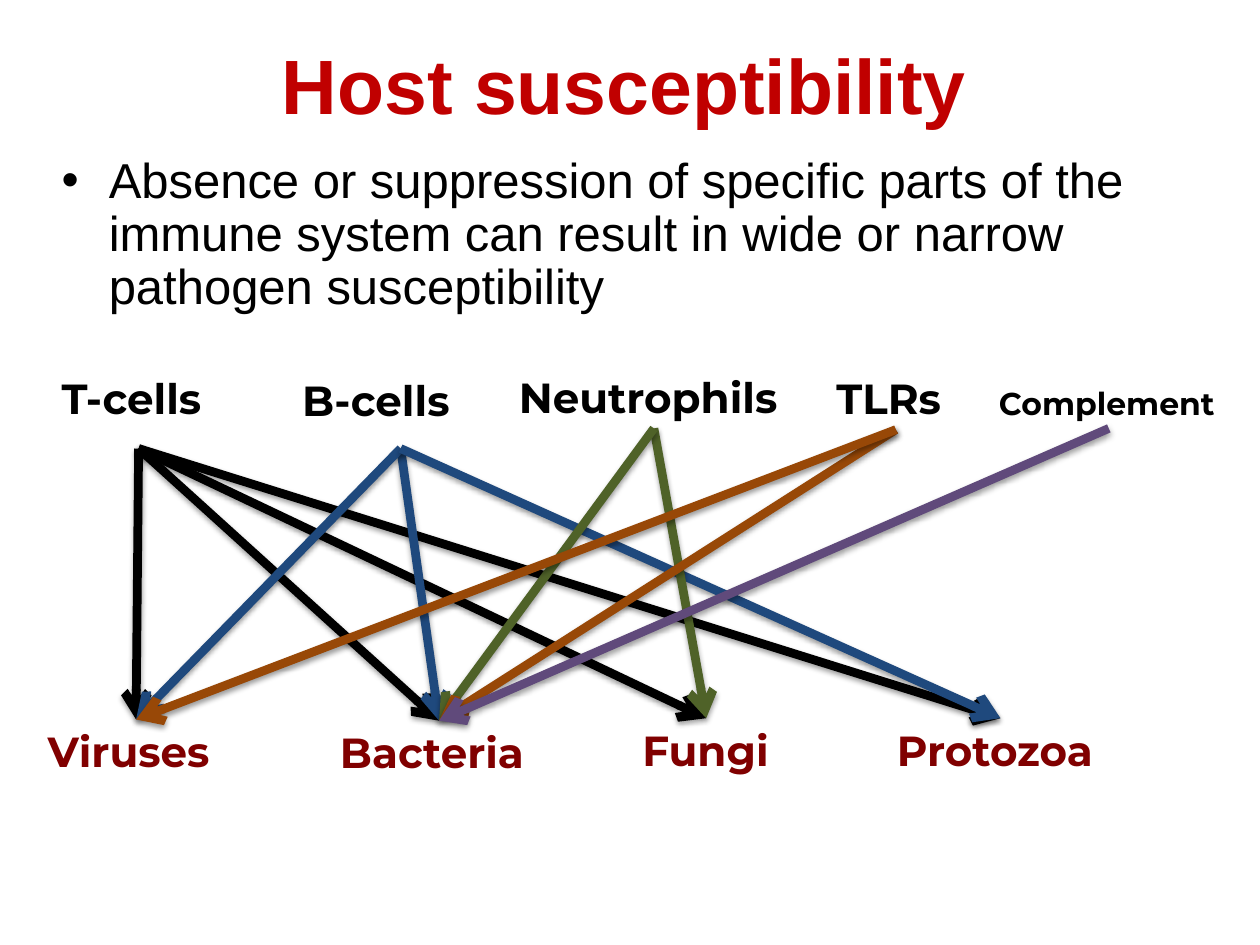
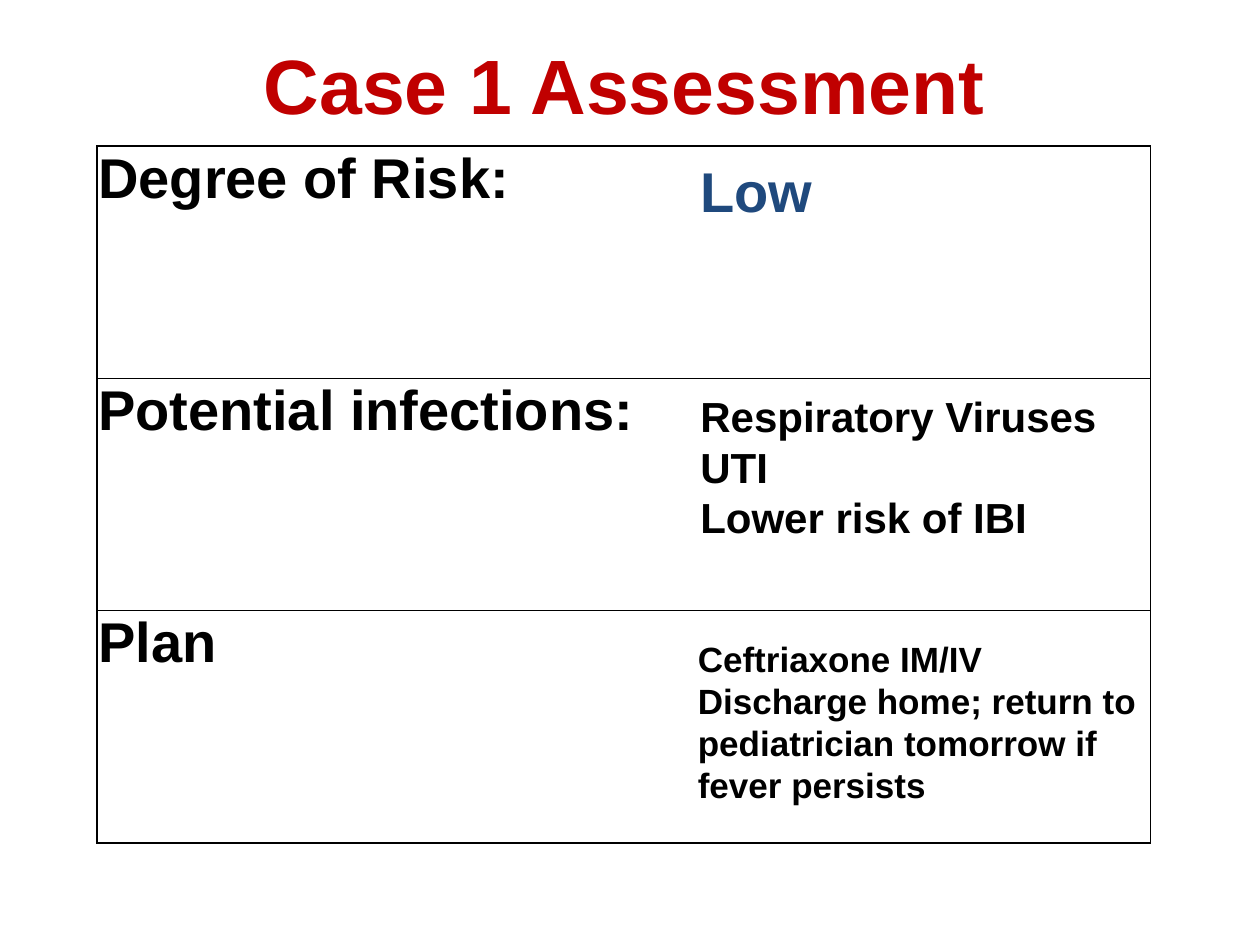
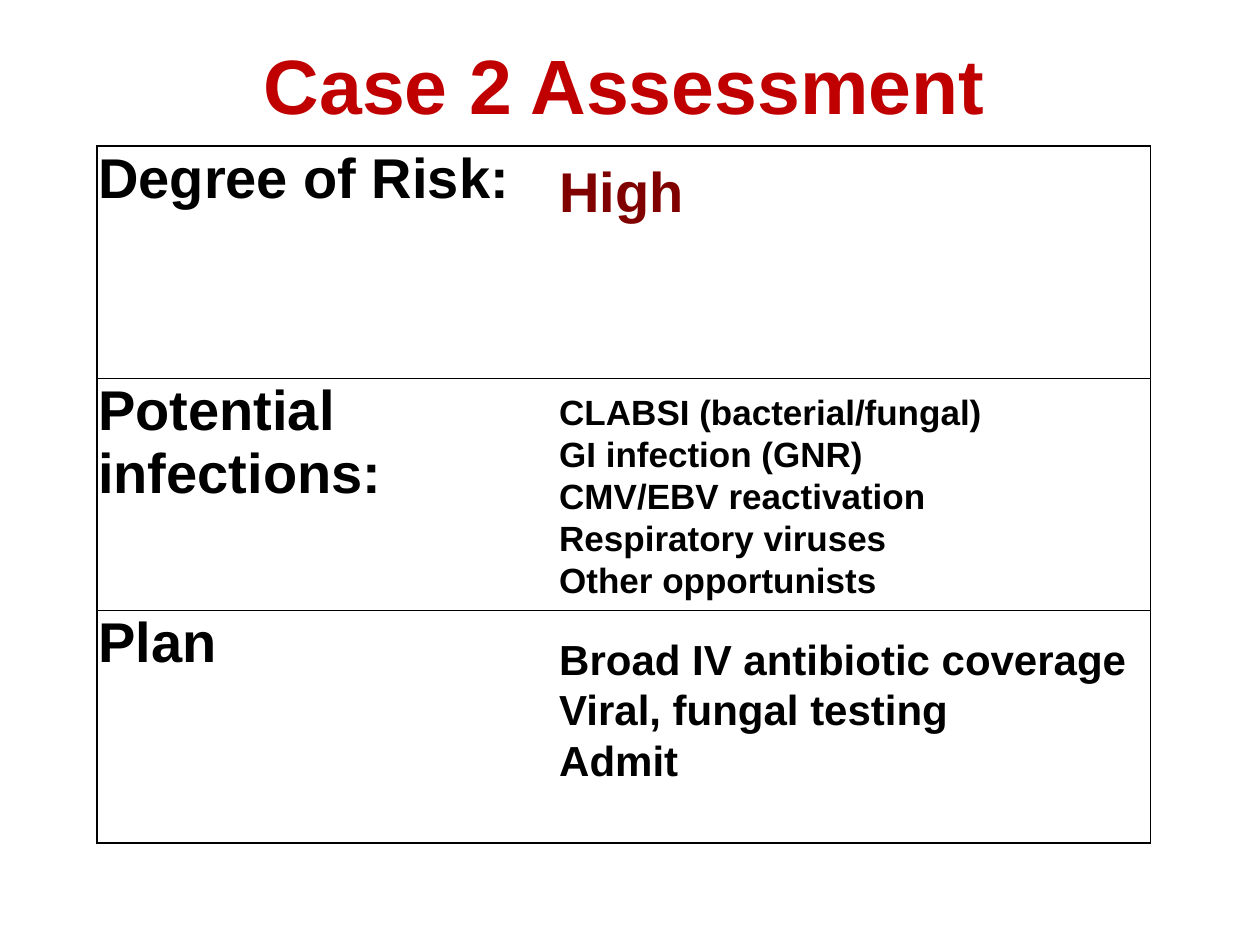
from dataclasses import dataclass

from lxml import etree
from pptx import Presentation
from pptx.dml.color import RGBColor
from pptx.enum.shapes import MSO_CONNECTOR
from pptx.enum.text import MSO_AUTO_SIZE, PP_ALIGN
from pptx.oxml.ns import qn
from pptx.util import Inches, Pt

STRAIGHT = MSO_CONNECTOR.STRAIGHT
CENTER = PP_ALIGN.CENTER
NO_AUTOFIT = MSO_AUTO_SIZE.NONE
TOP, BOTTOM = 0, 2  # connection sites of a rectangle

COLORS = {
    "title": "C00000", "text": "000000", "maroon": "800000", "blue": "1F497D",
    "green": "4F6228", "orange": "984807", "purple": "604A7B",
}
BODY_FONT, LABEL_FONT = "Arial", "Montserrat"

# The slide is a grid of 100 columns and 75 rows
COLS, ROWS = 100, 75
UNIT = Inches(10) // COLS


def grid(n):
    return round(n * UNIT)


@dataclass
class Box:
    x: float
    y: float
    w: float
    h: float

    def inner(self, x, y, w, h):
        return Box(self.x + x, self.y + y, w, h)

    def lengths(self):
        return [grid(n) for n in (self.x, self.y, self.w, self.h)]


TITLE_BOX = Box(3.6, 2.5, 91.9, 8.4)
INTRO_BOX = Box(3.9, 11.9, 93.3, 14.6)
DIAGRAM_BOX = Box(2.8, 29, 95, 34)
TABLE_BOX = Box(7.7, 11.6, 83.6, 55.3)


def rgb(name):
    return RGBColor.from_string(COLORS[name])


def sub(parent, tag, **attrs):
    return etree.SubElement(parent, qn(tag), attrs)


def write(tf, lines, size, color="text", font=BODY_FONT, bold=True):
    """Put one paragraph per line into a text frame."""
    for i, line in enumerate(lines):
        p = tf.add_paragraph() if i else tf.paragraphs[0]
        r = p.add_run()
        r.text = line
        r.font.name, r.font.size, r.font.bold = font, Pt(size), bold
        r.font.color.rgb = rgb(color)


def add_text(slide, box, lines, size, wrap=True, **style):
    sp = slide.shapes.add_textbox(*box.lengths())
    tf = sp.text_frame
    tf.word_wrap, tf.auto_size = wrap, NO_AUTOFIT
    write(tf, lines, size, **style)
    return sp


def add_slide(prs, title):
    slide = prs.slides.add_slide(prs.slide_layouts[6])
    sp = add_text(slide, TITLE_BOX, [title], 44, color="title")
    sp.text_frame.paragraphs[0].alignment = CENTER
    return slide


# Host susceptibility: bulleted statement and arrow diagram

def add_intro(slide, box, text):
    sp = add_text(slide, box, [text], 28, bold=False)
    p = sp.text_frame.paragraphs[0]
    p.line_spacing, p.space_before = 0.9, Pt(5.6)
    pPr = p._p.get_or_add_pPr()
    indent = grid(3.75)
    pPr.set("marL", str(indent))
    pPr.set("indent", str(-indent))
    sub(pPr, "a:buFont", typeface=BODY_FONT)
    sub(pPr, "a:buChar", char="•")


def add_label(slide, box, name, center, top, width, size=24, color="text"):
    height = 5 if size == 24 else 4
    return add_text(slide, box.inner(center - width / 2, top, width, height),
                    [name], size, wrap=False, color=color, font=LABEL_FONT)


def add_arrow(slide, start, target, color):
    """Draw from a label's bottom, or from a free point, to a target's top."""
    free = isinstance(start, Box)
    x, y = start.lengths()[:2] if free else (0, 0)
    line = slide.shapes.add_connector(STRAIGHT, x, y, x, y)
    if not free:
        line.begin_connect(start, BOTTOM)
    line.end_connect(target, TOP)
    line.line.color.rgb = rgb(color)
    line.line.width = Pt(5)
    sub(line.line._get_or_add_ln(), "a:tailEnd", type="arrow")
    effects = sub(line._element.spPr, "a:effectLst")
    shadow = sub(effects, "a:outerShdw", blurRad="40000", dist="20000",
                 dir="5400000", rotWithShape="0")
    tint = sub(shadow, "a:srgbClr", val=COLORS["text"])
    sub(tint, "a:alpha", val="38000")


# name: center, top, width
PATHOGENS = {
    "Viruses": (8, 28.1, 16),
    "Bacteria": (32.05, 28.2, 17.7),
    "Fungi": (53.25, 28, 12.1),
    "Protozoa": (76.6, 28, 18.4),
}
# name, (center, top, width, size), free start point, arrow color, targets
DEFENSES = [
    ("T-cells", (8.15, 0.1, 14.1, 24), (8.2, 6.6), "text",
     ["Viruses", "Bacteria", "Fungi", "Protozoa"]),
    ("B-cells", (27.45, 0.2, 14.5, 24), (29, 6.6), "blue",
     ["Bacteria", "Viruses", "Protozoa"]),
    ("Neutrophils", (49.1, 0, 23.4, 24), None, "green", ["Fungi", "Bacteria"]),
    ("TLRs", (68.3, 0.1, 11.4, 24), None, "orange", ["Bacteria", "Viruses"]),
    ("Complement", (85.2, 1, 19.4, 18), None, "purple", ["Bacteria"]),
]


def add_diagram(slide, box):
    pathogens = {name: add_label(slide, box, name, *place, color="maroon")
                 for name, place in PATHOGENS.items()}
    for name, place, foot, color, targets in DEFENSES:
        label = add_label(slide, box, name, *place)
        start = box.inner(*foot, 0, 0) if foot else label
        for target in targets:
            add_arrow(slide, start, pathogens[target], color)


# Case assessments: ruled table with answers laid over its right column

def set_borders(cell, sides):
    tcPr = cell._tc.get_or_add_tcPr()
    for side in "LRTB":
        ln = sub(tcPr, f"a:ln{side}", w=str(Pt(1)))
        if side in sides:
            sub(sub(ln, "a:solidFill"), "a:srgbClr", val=COLORS["text"])
        else:
            sub(ln, "a:noFill")


def add_assessment(slide, box, label_width, labels, answers):
    row_height = box.h / len(labels)
    table = slide.shapes.add_table(len(labels), 2, *box.lengths()).table
    table.first_row = table.horz_banding = False
    table.columns[0].width = grid(label_width)
    table.columns[1].width = grid(box.w - label_width)
    for i, lines in enumerate(labels):
        table.rows[i].height = grid(row_height)
        for cell, sides in zip(table.rows[i].cells, ("LTB", "RTB")):
            set_borders(cell, sides)
            cell.fill.background()
        cell = table.cell(i, 0)
        cell.margin_left = cell.margin_right = cell.margin_top = Inches(0.01)
        cell.margin_bottom = 0
        write(cell.text_frame, lines, 32)
    for i, (left, drop, width, height, size, color, lines) in enumerate(answers):
        place = box.inner(left, i * row_height + drop, width, height)
        add_text(slide, place, lines, size, color=color)


# title, label column width, labels,
# answers as (left, drop in row, width, height, size, color, lines)
CASES = [
    ("Case 1 Assessment", 44.7,
     [["Degree of Risk:"], ["Potential infections:"], ["Plan"]],
     [(46.9, 0.3, 25.6, 6.4, 32, "blue", ["Low"]),
      (46.9, 0.5, 36.8, 13.1, 24, "text",
       ["Respiratory Viruses", "UTI", "Lower risk of IBI"]),
      (46.7, 1.6, 38.4, 14.5, 20, "text",
       ["Ceftriaxone IM/IV",
        "Discharge home; return to pediatrician tomorrow if fever persists"])]),
    ("Case 2 Assessment", 36.1,
     [["Degree of Risk:"], ["Potential", "infections:"], ["Plan"]],
     [(35.7, 0.3, 25.3, 6.4, 32, "maroon", ["High"]),
      (35.7, 0.5, 48, 25.9, 20, "text",
       ["CLABSI (bacterial/fungal)", "GI infection (GNR)",
        "CMV/EBV reactivation", "Respiratory viruses", "Other opportunists"]),
      (35.7, 1.3, 48, 13.1, 24, "text",
       ["Broad IV antibiotic coverage", "Viral, fungal testing", "Admit"])]),
]


def main():
    prs = Presentation()
    prs.slide_width, prs.slide_height = grid(COLS), grid(ROWS)

    slide = add_slide(prs, "Host susceptibility")
    add_intro(slide, INTRO_BOX,
              "Absence or suppression of specific parts of the immune system "
              "can result in wide or narrow pathogen susceptibility")
    add_diagram(slide, DIAGRAM_BOX)

    for title, label_width, labels, answers in CASES:
        slide = add_slide(prs, title)
        add_assessment(slide, TABLE_BOX, label_width, labels, answers)

    prs.save("out.pptx")


if __name__ == "__main__":
    main()
